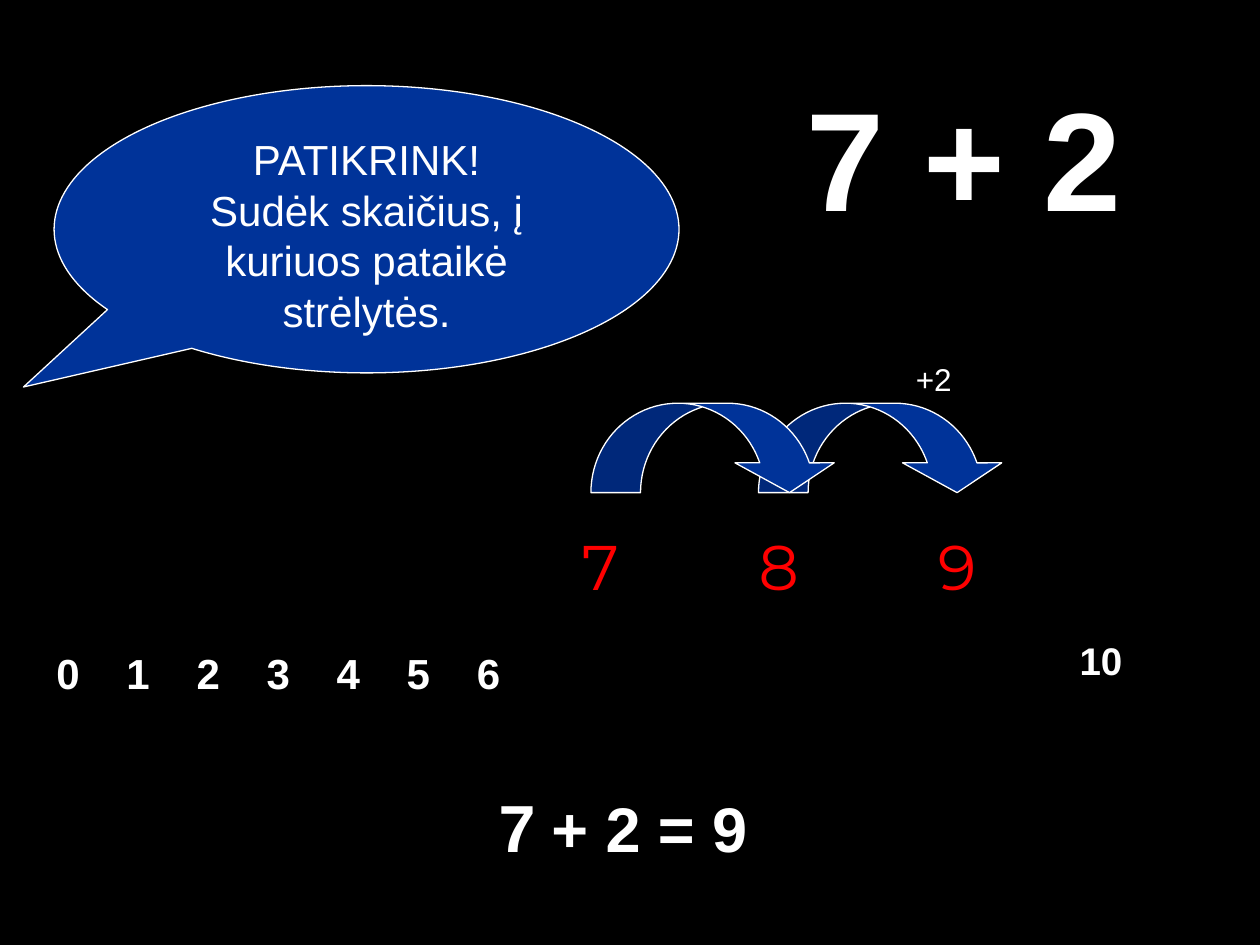
import pptx
import pptx.dml.color
import pptx.enum.shapes
import pptx.enum.text
import pptx.oxml
import pptx.oxml.ns
import pptx.util
from pptx.util import Inches

WHITE, BLUE, RED, BLACK = "FFFFFF", "003399", "FF0000", "000000"
LEFT = pptx.enum.text.PP_ALIGN.LEFT
CENTER = pptx.enum.text.PP_ALIGN.CENTER
SHAPES = pptx.enum.shapes.MSO_SHAPE


def color(value):
    return pptx.dml.color.RGBColor.from_string(value)


def outline_span(span, line_color, width):
    line = pptx.oxml.parse_xml(
        f'<a:ln {pptx.oxml.ns.nsdecls("a")} w="{pptx.util.Pt(width)}">'
        f'<a:solidFill><a:srgbClr val="{line_color}"/></a:solidFill></a:ln>')
    span.font._element.insert(0, line)


def set_tab_stops(para, pitch, count):
    stops = "".join(f'<a:tab pos="{Inches(pitch * (i + 1))}" algn="l"/>' for i in range(count))
    para._p.get_or_add_pPr().append(pptx.oxml.parse_xml(
        f'<a:tabLst {pptx.oxml.ns.nsdecls("a")}>{stops}</a:tabLst>'))


def write_text(shape, paragraphs, size=24, font="Arial", fill=WHITE, bold=False,
               align=LEFT, indent=0, before=0, wrap=True, outline=None):
    """Fill a shape; each paragraph is a string or a list of (string, size) pairs."""
    frame = shape.text_frame
    frame.word_wrap = wrap
    frame.auto_size = pptx.enum.text.MSO_AUTO_SIZE.NONE
    frame.vertical_anchor = pptx.enum.text.MSO_ANCHOR.TOP
    for index, content in enumerate(paragraphs):
        para = frame.add_paragraph() if index else frame.paragraphs[0]
        para.alignment = align
        para.space_before = pptx.util.Pt(before)
        if indent:
            para._p.get_or_add_pPr().set("marL", str(Inches(indent)))
        spans = [(content, size)] if isinstance(content, str) else content
        for words, points in spans:
            span = para.add_run()
            span.text = words
            span.font.name = font
            span.font.size = pptx.util.Pt(points)
            span.font.bold = bold
            span.font.color.rgb = color(fill)
            if outline:
                outline_span(span, *outline)


def add_text(page, position, paragraphs, **text_format):
    box = page.shapes.add_textbox(*map(Inches, position))
    write_text(box, paragraphs, **text_format)
    return box


def add_blue_shape(page, kind, position, adjustments):
    shape = page.shapes.add_shape(kind, *map(Inches, position))
    for index, value in enumerate(adjustments):
        shape.adjustments[index] = value
    shape.shadow.inherit = False
    shape.fill.solid()
    shape.fill.fore_color.rgb = color(BLUE)
    shape.line.color.rgb = color(WHITE)
    shape.line.width = pptx.util.Pt(0.75)
    return shape


def add_title(page):
    title = page.shapes.title
    title.left, title.top, title.width, title.height = map(Inches, (6.18, 0.52, 3.23, 1.43))
    write_text(title, ["7 + 2"], size=80, bold=True, indent=0.12, before=8)


def add_callout(page):
    callout = add_blue_shape(page, SHAPES.OVAL_CALLOUT, (0.43, 0.68, 4.96, 2.28), (-0.549, 0.549))
    write_text(callout, ["PATIKRINK!", "Sudėk skaičius, į kuriuos pataikė strėlytės."],
               align=CENTER)


def add_number_line(page):
    numbers = [str(number) for number in range(7)]
    row = add_text(page, (0.35, 5.09, 4.96, 0.5), ["\t".join(numbers)], bold=True, before=2.4)
    set_tab_stops(row.text_frame.paragraphs[0], 0.556, len(numbers) - 1)
    for index, digit in enumerate("789"):
        add_text(page, (4.45 + 1.415 * index, 4.14, 0.63, 1.59), [digit], size=36,
                 font="Montserrat", fill=RED, align=CENTER, wrap=False, outline=(WHITE, 0.75))
    add_text(page, (8.47, 5.01, 0.79, 0.47), ["10"], size=22, bold=True, before=2.2)


def add_jumps(page):
    for left in (6.02, 4.69):
        add_blue_shape(page, SHAPES.CURVED_DOWN_ARROW, (left, 3.2, 1.97, 0.71),
                       (0.555, 1.109, 0.333))
    add_text(page, (6.89, 2.81, 1.02, 0.4), ["+2"], size=18, indent=0.28, before=1.8)


def main():
    deck = pptx.Presentation()
    deck.slide_width, deck.slide_height = Inches(10), Inches(7.5)
    page = deck.slides.add_slide(deck.slide_layouts[5])
    page.background.fill.solid()
    page.background.fill.fore_color.rgb = color(BLACK)
    add_title(page)
    add_callout(page)
    add_number_line(page)
    add_jumps(page)
    add_text(page, (3.74, 6.19, 2.6, 0.73), [[("7", 38), (" ", 32), ("+ 2 = 9", 36)]],
             bold=True, indent=0.12, before=3.6)
    deck.save("out.pptx")


if __name__ == "__main__":
    main()
